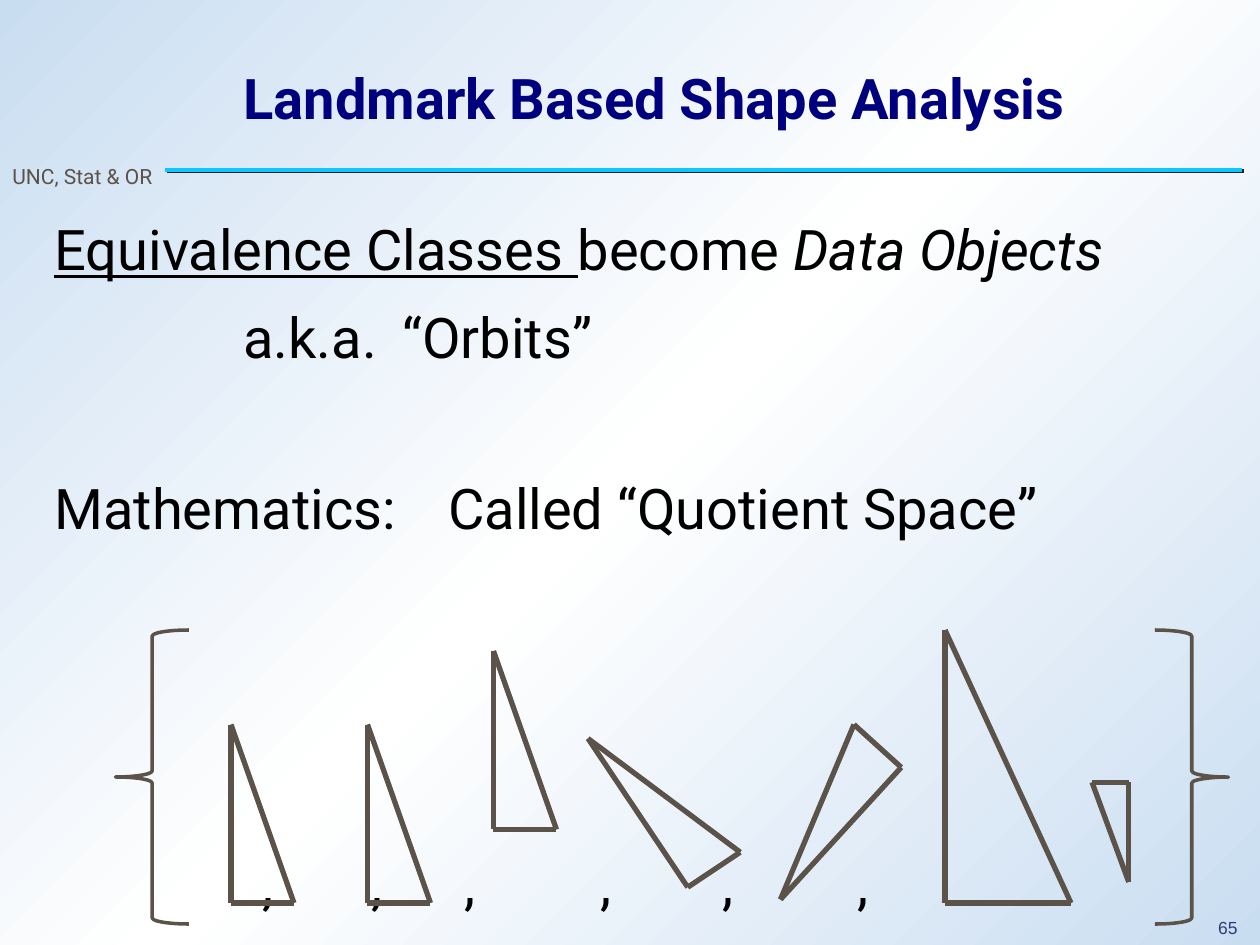
from copy import deepcopy

from lxml import etree
from pptx import Presentation
from pptx.dml.color import RGBColor
from pptx.enum.shapes import MSO_CONNECTOR, MSO_SHAPE
from pptx.enum.text import MSO_ANCHOR
from pptx.oxml.ns import qn
from pptx.util import Pt

COLORS = {
    "sky": "C9DDF1", "white": "FFFFFF", "cyan": "0FC7FF", "shadow": "232323",
    "number": "2A3D7A", "brown": "5B5249", "navy": "00007F", "black": "000000",
}


def color(name):
    return RGBColor.from_string(COLORS[name])


def apply(target, values):
    for name, value in values.items():
        setattr(target, name, value)


class SlideBuilder:
    font = "Roboto"

    def __init__(self, slide):
        self.slide = slide

    def background(self, stops, angle):
        fill = self.slide.background.fill
        fill.gradient()
        fill.gradient_angle = angle
        stop_list = self.slide.element.find(".//" + qn("a:gsLst"))
        while len(stop_list) < len(stops):
            stop_list.append(deepcopy(stop_list[0]))
        for stop, (position, name) in zip(fill.gradient_stops, stops):
            stop.position = position
            stop.color.rgb = color(name)

    def line(self, start, end, name, width, shadow=None):
        connector = self.slide.shapes.add_connector(
            MSO_CONNECTOR.STRAIGHT, *[Pt(value) for value in (*start, *end)])
        connector.line.color.rgb = color(name)
        connector.line.width = Pt(width)
        properties = connector.element.find(qn("p:spPr"))
        effects = etree.SubElement(properties, qn("a:effectLst"))
        if shadow:
            outer = etree.SubElement(effects, qn("a:outerShdw"), blurRad="0",
                                     dist=str(Pt(1.4)), dir="2700000", rotWithShape="0")
            etree.SubElement(outer, qn("a:srgbClr"), val=COLORS[shadow])

    def triangle(self, corners):
        for start, end in zip(corners, corners[1:] + corners[:1]):
            self.line(start, end, "brown", 3)

    def brace(self, left, top, width, height, rotation=0):
        shape = self.slide.shapes.add_shape(
            MSO_SHAPE.LEFT_BRACE, Pt(left), Pt(top), Pt(width), Pt(height))
        shape.shadow.inherit = False
        shape.rotation = rotation
        shape.fill.background()
        shape.line.color.rgb = color("brown")
        shape.line.width = Pt(2)

    def text(self, box, paragraphs, size, name, font=None, bold=False, frame=None):
        """Each paragraph holds its runs, tab stops and paragraph format."""
        shape = self.slide.shapes.add_textbox(*[Pt(value) for value in box])
        apply(shape.text_frame, {"word_wrap": True, **(frame or {})})
        for index, (runs, tabs, values) in enumerate(paragraphs):
            paragraph = (shape.text_frame.add_paragraph() if index
                         else shape.text_frame.paragraphs[0])
            apply(paragraph, values)
            if tabs:
                tab_list = etree.SubElement(
                    paragraph._p.get_or_add_pPr(), qn("a:tabLst"))
                for position in tabs:
                    etree.SubElement(tab_list, qn("a:tab"), pos=str(Pt(position)), algn="l")
            for content, run_values in runs:
                run = paragraph.add_run()
                run.text = content
                apply(run.font, {"name": font or self.font, "size": Pt(size),
                                 "bold": bold, **run_values})
                run.font.color.rgb = color(name)


def right_triangle(left, top, width, height):
    return [(left, top), (left, top + height), (left + width, top + height)]


def main():
    presentation = Presentation()
    presentation.slide_width, presentation.slide_height = Pt(720), Pt(540)
    slide = presentation.slides.add_slide(presentation.slide_layouts[6])
    builder = SlideBuilder(slide)
    builder.background([(0, "sky"), (0.5, "white"), (1, "sky")], 315)

    # Header rule, slide number and department
    builder.line((94.5, 97), (710, 97), "cyan", 2.25, shadow="shadow")
    builder.text((689, 522, 27, 18), [([("65", {})], [], {"line_spacing": 0.9})],
                 10, "number", font="Arial", frame={"word_wrap": False})
    builder.text((0, 90, 97, 22), [([("UNC, Stat & OR", {})], [], {})],
                 12, "brown", frame={"word_wrap": False})

    # Title
    builder.text((132, 36, 563, 39), [([("Landmark Based Shape Analysis", {})], [], {})],
                 32, "navy", bold=True, frame={"vertical_anchor": MSO_ANCHOR.MIDDLE})

    # Body, ending with the commas between the triangles
    spacing = {"line_spacing": 1.1}
    commas = [119, 181, 234.5, 312, 382, 459]
    builder.text((24, 108, 663, 408), [
        ([("Equivalence Classes ", {"underline": True}), ("become ", {}),
          ("Data Objects", {"italic": True})], [], spacing),
        ([("\ta.k.a.\t“Orbits”", {})], [108, 199],
         {**spacing, "space_before": Pt(7.5)}),
        ([("Mathematics:\tCalled “Quotient Space”", {})], [225],
         {**spacing, "space_before": Pt(56)}),
        ([("\t," * len(commas), {})], commas,
         {**spacing, "space_before": Pt(172)}),
    ], 32, "black", frame={"margin_top": Pt(11)})

    # Equivalent triangles: moved, rotated, scaled and reflected
    for corners in (
        right_triangle(132, 414, 36, 102),
        right_triangle(210, 414, 36, 102),
        right_triangle(282, 372, 36, 102),
        [(336, 422), (393, 507), (423, 487)],
        [(446, 514), (515, 438.5), (488, 414)],
        right_triangle(540, 360, 72, 156),
        right_triangle(645, 504, -21, -57),
    ):
        builder.triangle(corners)

    # Set braces
    builder.brace(66, 360, 42, 168)
    builder.brace(660, 360, 42, 168, rotation=180)

    presentation.save("out.pptx")


if __name__ == "__main__":
    main()
